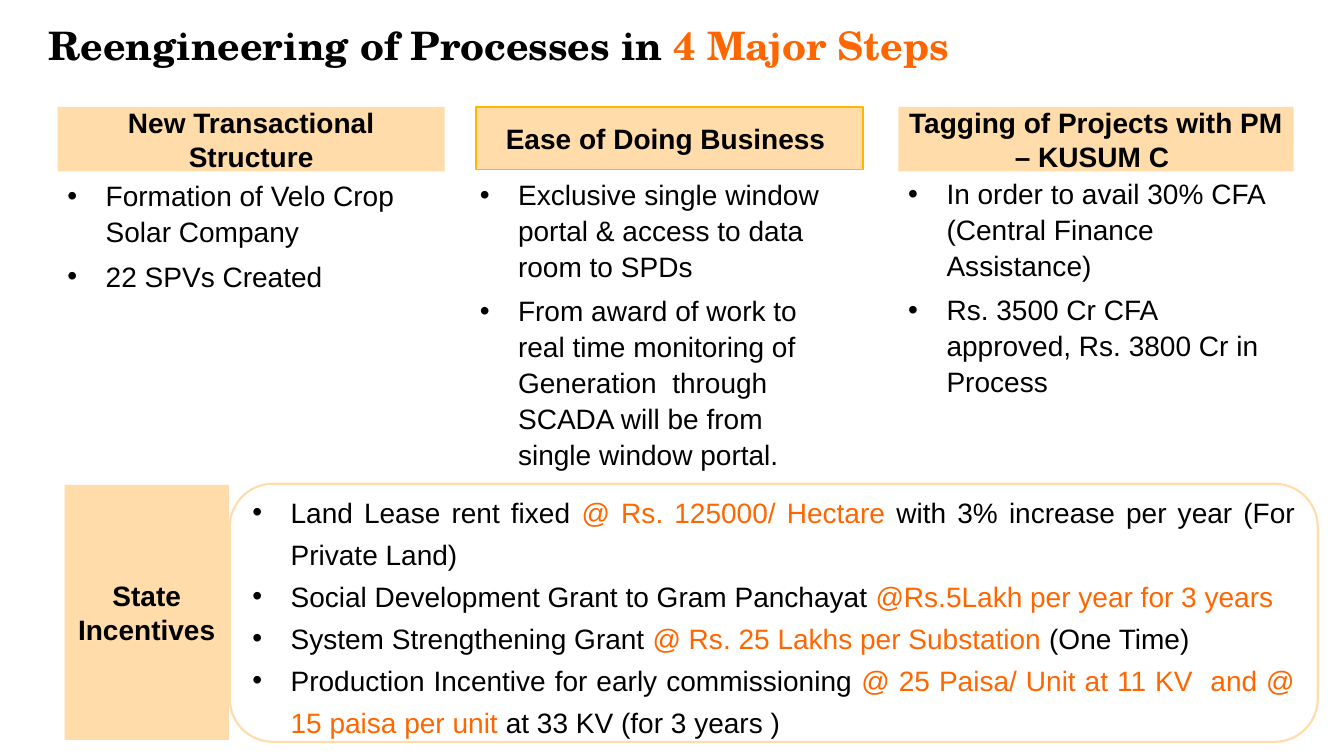
from lxml.etree import SubElement
from pptx import Presentation
from pptx.dml.color import RGBColor
from pptx.enum.shapes import MSO_SHAPE
from pptx.enum.text import MSO_ANCHOR, PP_ALIGN
from pptx.oxml.ns import qn
from pptx.util import Inches, Pt

WIDTH, HEIGHT = Inches(13.33), Inches(7.5)
COLORS = {
    "text": "000000",
    "accent": "FF6600",
    "band": "FFDCA9",
    "border": "FFB600",
    "paper": "FFFFFF",
}

COLUMNS = [
    {
        "heading": "New Transactional Structure",
        "header": (4.28, 14.13, 28.81, 8.53),
        "body": (4.28, 22.67, 28.43, 47.2),
        "border": None,
        "points": ["Formation of Velo Crop Solar Company", "22 SPVs Created"],
    },
    {
        "heading": "Ease of Doing Business ",
        "header": (35.41, 14.13, 28.81, 8.27),
        "body": (34.96, 22.53, 28.43, 47.07),
        "border": "border",
        "points": [
            "Exclusive single window portal & access to data room to SPDs",
            "From award of work to real time monitoring of Generation  through "
            "SCADA will be from single window portal.",
        ],
    },
    {
        "heading": "Tagging of Projects with PM – KUSUM C ",
        "header": (66.84, 14.13, 29.41, 8.53),
        "body": (66.84, 22.4, 29.41, 47.47),
        "border": None,
        "points": [
            "In order to avail 30% CFA (Central Finance Assistance)",
            "Rs. 3500 Cr CFA approved, Rs. 3800 Cr in Process",
        ],
    },
]

INCENTIVES = [
    [
        ("Land Lease rent fixed ", "text"),
        ("@ Rs. 125000/ Hectare ", "accent"),
        ("with 3% increase per year (For Private Land)", "text"),
    ],
    [
        ("Social Development Grant to Gram Panchayat ", "text"),
        ("@Rs.5Lakh per year for 3 years", "accent"),
    ],
    [
        ("System Strengthening Grant ", "text"),
        ("@ Rs. 25 Lakhs per Substation ", "accent"),
        ("(One Time)", "text"),
    ],
    [
        ("Production Incentive for early commissioning ", "text"),
        ("@ 25 Paisa/ Unit at 11 KV  and @ 15 paisa per unit", "accent"),
        (" at 33 KV (for 3 years )", "text"),
    ],
]


def color(name):
    return RGBColor.from_string(COLORS[name])


def place(left, top, width, height):
    return (
        round(WIDTH * left / 100),
        round(HEIGHT * top / 100),
        round(WIDTH * width / 100),
        round(HEIGHT * height / 100),
    )


def add_runs(paragraph, runs, size=20, font="Arial", bold=False):
    for text, color_name in runs:
        run = paragraph.add_run()
        run.text = text
        run.font.size = Pt(size)
        run.font.name = font
        run.font.bold = bold
        run.font.color.rgb = color(color_name)


def add_box(slide, area, fill=None, border=None, border_width=1,
            kind=MSO_SHAPE.RECTANGLE, anchor=MSO_ANCHOR.MIDDLE):
    shape = slide.shapes.add_shape(kind, *place(*area))
    shape.shadow.inherit = False
    if fill:
        shape.fill.solid()
        shape.fill.fore_color.rgb = color(fill)
    else:
        shape.fill.background()
    if border:
        shape.line.color.rgb = color(border)
        shape.line.width = Pt(border_width)
    else:
        shape.line.fill.background()
    shape.text_frame.word_wrap = True
    shape.text_frame.vertical_anchor = anchor
    return shape


def add_label(slide, area, text, border=None):
    shape = add_box(slide, area, "band", border)
    paragraph = shape.text_frame.paragraphs[0]
    paragraph.alignment = PP_ALIGN.CENTER
    add_runs(paragraph, [(text, "text")], bold=True)


def add_bullets(shape, points, alignment, line_spacing, space_after):
    frame = shape.text_frame
    for index, runs in enumerate(points):
        paragraph = frame.add_paragraph() if index else frame.paragraphs[0]
        paragraph.alignment = alignment
        paragraph.line_spacing = line_spacing
        paragraph.space_after = Pt(space_after)
        properties = paragraph._p.get_or_add_pPr()
        properties.set("marL", str(Inches(0.38)))
        properties.set("indent", str(-Inches(0.38)))
        SubElement(properties, qn("a:buFont"), typeface="Arial")
        SubElement(properties, qn("a:buChar"), char="•")
        add_runs(paragraph, runs)


def add_title(slide):
    frame = slide.shapes.add_textbox(*place(3.6, 3.73, 92.72, 8.53)).text_frame
    frame.word_wrap = True
    frame.margin_left = frame.margin_right = 0
    frame.margin_top = frame.margin_bottom = 0
    paragraph = frame.paragraphs[0]
    paragraph.line_spacing = 0.85
    runs = [("Reengineering of Processes in ", "text"), ("4 Major Steps", "accent")]
    add_runs(paragraph, runs, 28, "TeX Gyre Schola", True)


def add_column(slide, column):
    body = add_box(slide, column["body"], "paper", anchor=MSO_ANCHOR.TOP)
    points = [[(point, "text")] for point in column["points"]]
    add_bullets(body, points, PP_ALIGN.LEFT, 1.07, 6)
    add_label(slide, column["header"], column["heading"], column["border"])


def add_incentives(slide):
    panel = add_box(slide, (17.1, 64, 80.95, 34.13), border="band",
                    border_width=1.5, kind=MSO_SHAPE.ROUNDED_RECTANGLE)
    add_bullets(panel, INCENTIVES, PP_ALIGN.JUSTIFY, 1.25, 0)
    add_label(slide, (4.8, 64.13, 12.23, 33.73), "State Incentives")


def main():
    presentation = Presentation()
    presentation.slide_width, presentation.slide_height = WIDTH, HEIGHT
    slide = presentation.slides.add_slide(presentation.slide_layouts[6])
    add_title(slide)
    for column in COLUMNS:
        add_column(slide, column)
    add_incentives(slide)
    presentation.save("out.pptx")


if __name__ == "__main__":
    main()
